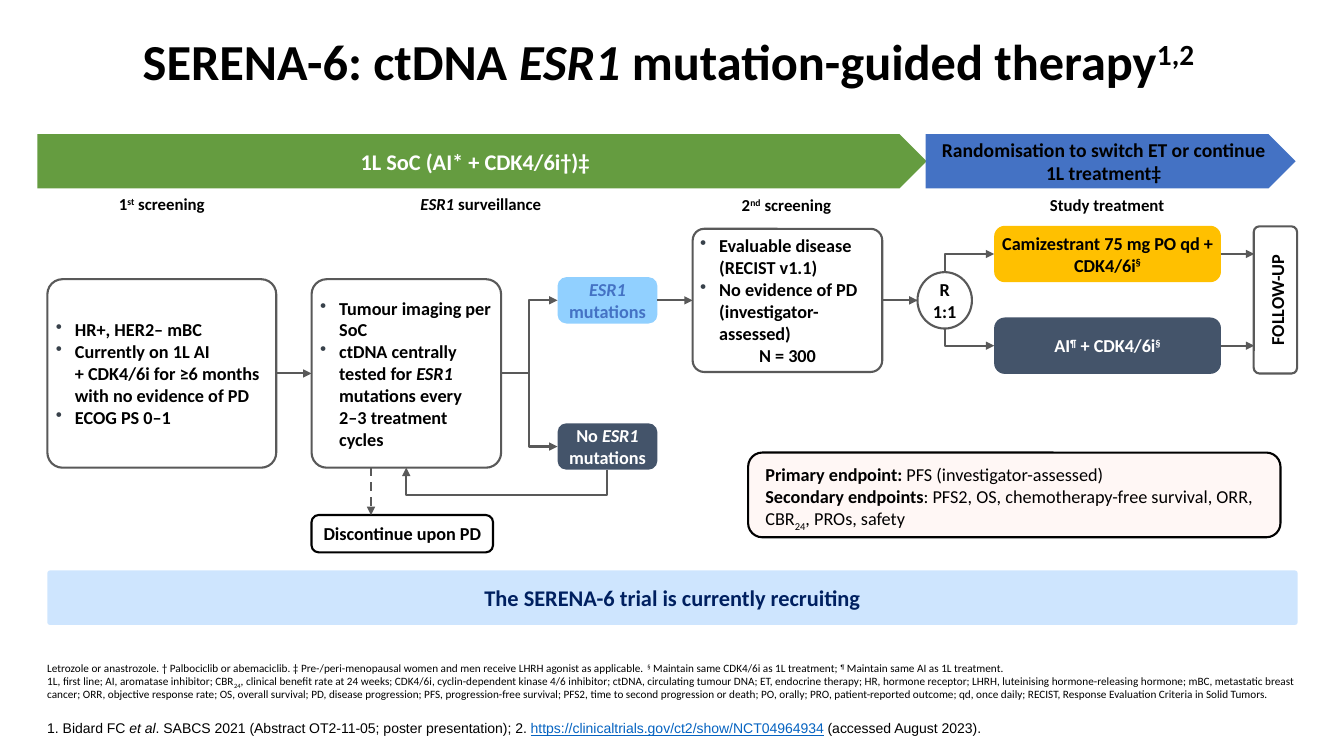
from lxml.etree import SubElement
from pptx import Presentation
from pptx.dml.color import RGBColor
from pptx.enum.dml import MSO_LINE
from pptx.enum.shapes import MSO_CONNECTOR as CONNECTOR, MSO_SHAPE as SHAPE
from pptx.enum.text import MSO_ANCHOR as ANCHOR, PP_ALIGN as ALIGN
from pptx.oxml.ns import qn
from pptx.util import Pt

SCALE = 9144
LEFT, RIGHT = 1, 3
COLOURS = {"black": "000000", "white": "FFFFFF", "line": "595959", "bullet": "38414A", "green": "659C40",
           "blue": "4472C4", "slate": "44546A", "amber": "FFC000", "sky": "91D0FF", "blush": "FFF7F5",
           "pale": "CEE5FE", "navy": "002060", "link": "0563C1"}
BASELINES = {"super": "30000", "sub": "-25000"}
ESR1, SECTION, PILCROW = ("ESR1", "italic"), ("§", "super"), ("¶", "super")

def px(*lengths):
    """Turn px into EMU."""
    return [int(length * SCALE) for length in lengths]

def colour(name):
    """Look up a named colour."""
    return RGBColor.from_string(COLOURS[name])

def inside(box, left, top, *size):
    """Place a point or a box relative to a box."""
    return (box[0] + left, box[1] + top, *size)

def add_run(paragraph, text, style=None):
    """Add one run in the given style."""
    run = paragraph.add_run()
    run.text = text
    if style in ("italic", "bold"):
        setattr(run.font, style, True)
    elif style == "link":
        run.font.underline = True
        run.font.color.rgb = colour("link")
    elif style:
        run._r.get_or_add_rPr().set("baseline", BASELINES[style])

def add_bullet(paragraph):
    """Give a paragraph a hanging round bullet."""
    properties = paragraph._p.get_or_add_pPr()
    properties.set("marL", str(19 * SCALE))
    properties.set("indent", str(-19 * SCALE))
    SubElement(SubElement(properties, qn("a:buClr")), qn("a:srgbClr")).set("val", COLOURS["bullet"])
    SubElement(properties, qn("a:buChar")).set("char", "•")

def write(shape, paragraphs, size=13, ink="black", bold=True, align=ALIGN.CENTER, anchor=ANCHOR.MIDDLE,
          margins=(4, 4), bullets=0, spacing=None):
    """Fill a shape with paragraphs, each a list of strings and styled pairs."""
    frame = shape.text_frame
    frame.word_wrap = True
    frame.vertical_anchor = anchor
    frame.margin_left, frame.margin_top = frame.margin_right, frame.margin_bottom = px(*margins)
    for index, pieces in enumerate(paragraphs):
        paragraph = frame.add_paragraph() if index else frame.paragraphs[0]
        paragraph.alignment = ALIGN.LEFT if index < bullets else align
        paragraph.line_spacing = spacing
        if index < bullets:
            add_bullet(paragraph)
        font = paragraph.font
        font.name, font.size, font.bold = "Calibri", Pt(size), bold
        font.color.rgb = colour(ink)
        for piece in pieces:
            if piece == "\n":
                paragraph.add_line_break()
            else:
                add_run(paragraph, *((piece,) if isinstance(piece, str) else piece))

def add_panel(slide, box, paragraphs, fill="white", line=None, kind=SHAPE.ROUNDED_RECTANGLE, corner=None, **text):
    """Add a filled shape with text."""
    shape = slide.shapes.add_shape(kind, *px(*box))
    shape.shadow.inherit = False
    shape.fill.solid()
    shape.fill.fore_color.rgb = colour(fill)
    if line:
        shape.line.color.rgb = colour(line)
        shape.line.width = Pt(1.5)
    else:
        shape.line.fill.background()
    if corner:
        shape.adjustments[0] = corner
    write(shape, paragraphs, **text)
    return shape

def add_arrow(slide, start, end, kind=CONNECTOR.STRAIGHT):
    """Add a connector with an arrowhead at its end."""
    arrow = slide.shapes.add_connector(kind, *px(*start, *end))
    arrow.line.color.rgb = colour("line")
    arrow.line.width = Pt(1.5)
    SubElement(arrow.line._get_or_add_ln(), qn("a:tailEnd")).set("type", "triangle")
    SubElement(arrow._element.spPr, qn("a:effectLst"))
    return arrow

def add_turned_arrow(slide, start, end, preset, adjust=None):
    """Add an elbow arrow that leaves its start vertically."""
    x, y = (start[0] + end[0]) / 2, (start[1] + end[1]) / 2
    across, down = (end[1] - start[1]) / 2, (start[0] - end[0]) / 2
    arrow = add_arrow(slide, (x - across, y - down), (x + across, y + down), CONNECTOR.ELBOW)
    properties = arrow._element.spPr
    properties.find(qn("a:xfrm")).set("rot", "5400000")
    geometry = properties.find(qn("a:prstGeom"))
    geometry.set("prst", preset)
    if adjust:
        guide = SubElement(geometry.find(qn("a:avLst")), qn("a:gd"))
        guide.set("name", "adj1")
        guide.set("fmla", f"val {adjust}")

def join(slide, first, second, kind=CONNECTOR.STRAIGHT):
    """Lead an arrow from one shape's right side to another's left side."""
    arrow = add_arrow(slide, (0, 0), (1, 1), kind)
    arrow.begin_connect(first, RIGHT)
    arrow.end_connect(second, LEFT)

def add_title(slide, box):
    """Place the slide title."""
    title = slide.shapes.title
    title.left, title.top, title.width, title.height = px(*box)
    write(title, [["SERENA-6: ctDNA ", ESR1, " mutation-guided therapy", ("1,2", "super")]],
          size=36, margins=(10, 5), spacing=0.9)

def add_phases(slide, box):
    """Add the two phase banners and the stage labels."""
    for left, width, text, fill, ink, size in (
            (0, 882, "1L SoC (AI* + CDK4/6i†)‡", "green", "white", 16),
            (881, 367, "Randomisation to switch ET or continue 1L treatment‡", "blue", "black", 14)):
        add_panel(slide, inside(box, left, 0, width, 54), [[text]], fill, kind=SHAPE.PENTAGON,
                  size=size, ink=ink, margins=(10, 5))
    for left, top, width, pieces in ((40, 54, 167, ["1", ("st", "super"), " screening"]),
                                     (254, 54, 372, [ESR1, " surveillance"]),
                                     (649, 55, 188, ["2", ("nd", "super"), " screening"]),
                                     (967, 55, 188, ["Study treatment"])):
        label = slide.shapes.add_textbox(*px(*inside(box, left, top, width, 30)))
        write(label, [pieces], size=12, margins=(10, 5))

def add_surveillance(slide, box):
    """Add first screening and surveillance, and return the positive branch."""
    screening = add_panel(slide, inside(box, 0, 2, 227, 187), [
        ["HR+, HER2– mBC"], ["Currently on 1L AI ", "\n", "+ CDK4/6i for ≥6 months with no evidence of PD"],
        ["ECOG PS 0–1"]], line="line", corner=0.08, bullets=3)
    testing = add_panel(slide, inside(box, 262, 2, 188, 187), [
        ["Tumour imaging per SoC"],
        ["ctDNA centrally tested for ", ESR1, " mutations every ", "\n", "2–3 treatment cycles"]],
        line="line", corner=0.08, bullets=2)
    join(slide, screening, testing)
    positive, negative = (
        add_panel(slide, inside(box, 506, top, 99, 46), [pieces], fill, corner=0.19, ink=ink)
        for top, pieces, fill, ink in ((0, [ESR1, " mutations"], "sky", "blue"),
                                       (145, ["No ", ESR1, " mutations"], "slate", "white")))
    for branch in (positive, negative):
        join(slide, testing, branch, CONNECTOR.ELBOW)
    add_turned_arrow(slide, inside(box, 555, 191), inside(box, 356, 189), "bentConnector3", -1250000)
    add_panel(slide, inside(box, 262, 236, 180, 37), [["Discontinue upon PD"]], line="black", corner=0.19)
    stop = add_arrow(slide, inside(box, 321, 189), inside(box, 321, 236))
    stop.line.dash_style = MSO_LINE.DASH
    return positive

def add_treatment(slide, box, positive):
    """Add second screening, randomisation, both arms and follow-up."""
    second = add_panel(slide, inside(box, 0, 3, 188, 142), [
        ["Evaluable disease (RECIST v1.1)"], ["No evidence of PD (investigator-assessed)"], ["N = 300"]],
        line="line", corner=0.08, bullets=2)
    join(slide, positive, second)
    add_panel(slide, inside(box, 223, 46, 54, 56), [["R", "\n", "1:1"]], line="line", kind=SHAPE.OVAL, margins=(0, 7))
    add_arrow(slide, inside(box, 188, 74), inside(box, 223, 74)).begin_connect(second, RIGHT)
    for top, fork, pieces, fill, ink in (
            (0, 46, ["Camizestrant 75 mg PO qd + CDK4/6i", SECTION], "amber", "black"),
            (91, 102, ["AI", PILCROW, " + CDK4/6i", SECTION], "slate", "white")):
        arm = add_panel(slide, inside(box, 299, top, 225, 56), [pieces], fill, corner=0.19, ink=ink, margins=(0, 4))
        middle = top + 28
        add_turned_arrow(slide, inside(box, 250, fork), inside(box, 299, middle), "bentConnector2")
        add_arrow(slide, inside(box, 524, middle), inside(box, 557, middle)).begin_connect(arm, RIGHT)
    follow_up = add_panel(slide, inside(box, 505, 52, 146, 43), [["FOLLOW-UP"]], line="line", corner=0.13,
                          margins=(13, 13), spacing=1.14)
    follow_up.rotation = 270

def add_summary(slide, box):
    """Add the endpoints panel and the recruitment banner."""
    add_panel(slide, inside(box, 695, 0, 528, 84), [
        [("Primary endpoint: ", "bold"), "PFS (investigator-assessed)"],
        [("Secondary endpoints", "bold"), ": PFS2, OS, chemotherapy-free survival, ORR, CBR", ("24", "sub"),
         ", PROs, safety"]], "blush", "black", bold=False, align=ALIGN.LEFT, anchor=ANCHOR.TOP, margins=(13, 7))
    add_panel(slide, inside(box, 0, 117, 1240, 54), [["The SERENA-6 trial is currently recruiting"]], "pale",
              corner=0.05, size=16, ink="navy", margins=(8, 1))

def add_notes(slide, box):
    """Add the abbreviations and the references."""
    notes = slide.shapes.add_textbox(*px(*box))
    write(notes, [
        ["Letrozole or anastrozole. † Palbociclib or abemaciclib. ‡ Pre-/peri-menopausal women and men receive "
         "LHRH agonist as applicable. ", SECTION, " Maintain same CDK4/6i as 1L treatment; ", PILCROW,
         " Maintain same AI as 1L treatment."],
        ["1L, first line; AI, aromatase inhibitor; CBR", ("24", "sub"), ", clinical benefit rate at 24 weeks; "
         "CDK4/6i, cyclin-dependent kinase 4/6 inhibitor; ctDNA, circulating tumour DNA; ET, endocrine therapy; "
         "HR, hormone receptor; LHRH, luteinising hormone-releasing hormone; mBC, metastatic breast cancer; "
         "ORR, objective response rate; OS, overall survival; PD, disease progression; PFS, progression-free "
         "survival; PFS2, time to second progression or death; PO, orally; PRO, patient-reported outcome; "
         "qd, once daily; RECIST, Response Evaluation Criteria in Solid Tumors."],
        ["1. Bidard FC ", ("et al", "italic"), ". SABCS 2021 (Abstract OT2-11-05; poster presentation); 2. ",
         ("https://clinicaltrials.gov/ct2/show/NCT04964934", "link"), " (accessed August 2023)."]],
        size=8, bold=False, align=ALIGN.LEFT, anchor=ANCHOR.BOTTOM, margins=(10, 0), spacing=0.9)
    reference = notes.text_frame.paragraphs[-1]
    reference.space_before = Pt(15)
    reference.font.name, reference.font.size = "Arial", Pt(10)

def main():
    """Build and save the slide."""
    presentation = Presentation()
    presentation.slide_width, presentation.slide_height = px(1333, 750)
    slide = presentation.slides.add_slide(presentation.slide_layouts[5])
    add_title(slide, (98, 18, 1130, 92))
    add_phases(slide, (37, 133, 1248, 85))
    positive = add_surveillance(slide, (47, 275, 605, 273))
    add_treatment(slide, (687, 224, 600, 146), positive)
    add_summary(slide, (47, 449, 1240, 171))
    add_notes(slide, (37, 655, 1267, 76))
    presentation.save("out.pptx")

if __name__ == "__main__":
    main()
